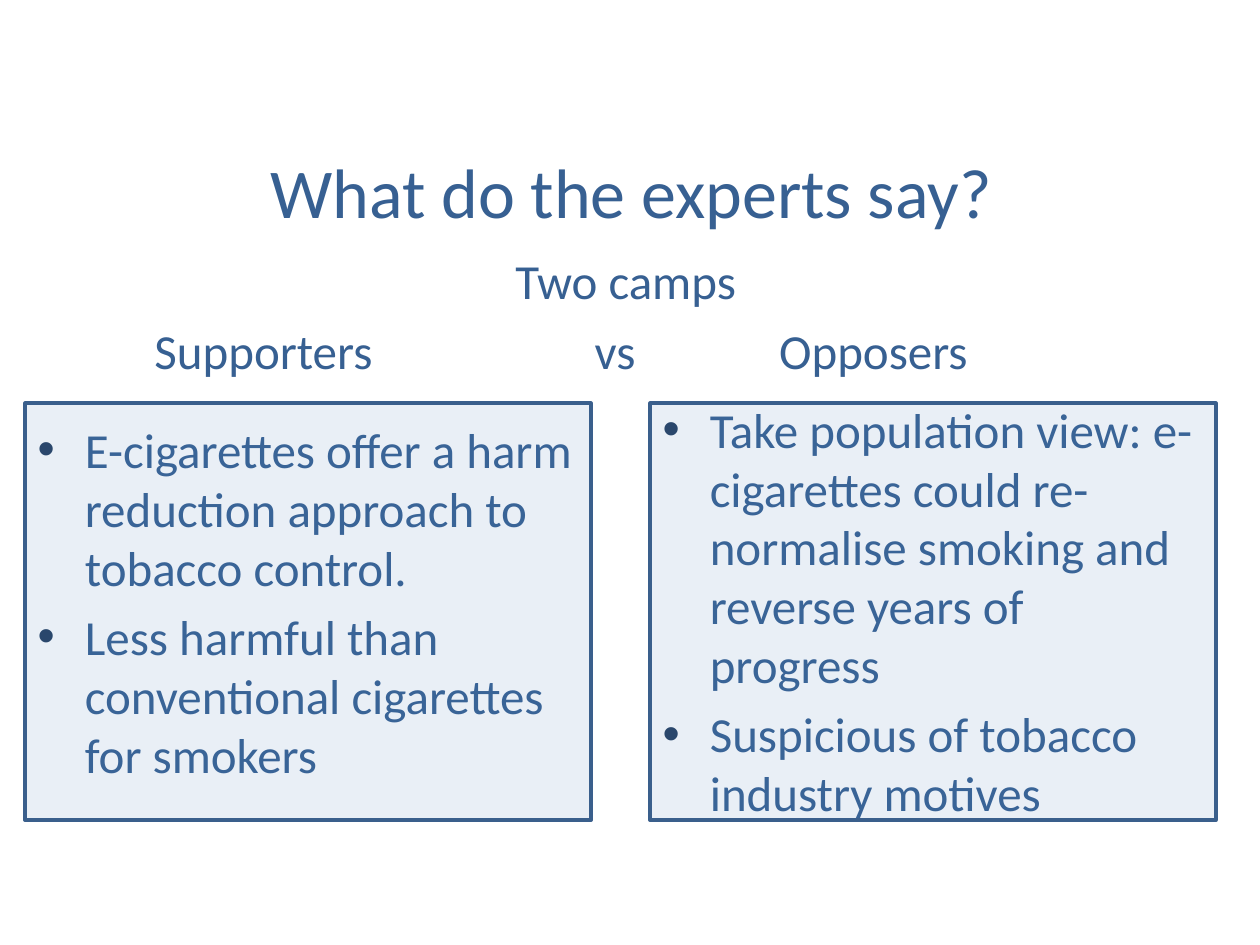
from lxml.etree import SubElement
from pptx import Presentation
from pptx.dml.color import RGBColor
from pptx.enum.shapes import MSO_SHAPE
from pptx.enum.text import MSO_ANCHOR, PP_ALIGN
from pptx.oxml.ns import qn
from pptx.util import Pt

BLUE = "376092"


def color(code):
    return RGBColor.from_string(code)


def write(left, top, width, height, lines, size=28, gap=6):
    """Add a text box with one paragraph per line and return its text frame."""
    box = slide.shapes.add_textbox(Pt(left), Pt(top), Pt(width), Pt(height))
    frame = box.text_frame
    frame.word_wrap = True
    for i, line in enumerate(lines):
        para = frame.paragraphs[0] if i == 0 else frame.add_paragraph()
        para.space_before = Pt(gap)
        run = para.add_run()
        run.text = line
        run.font.name = "Calibri"
        run.font.size = Pt(size)
        run.font.color.rgb = color(BLUE)
    return frame


deck = Presentation()
deck.slide_width, deck.slide_height = Pt(720), Pt(540)
slide = deck.slides.add_slide(deck.slide_layouts[6])

# Heading
title = write(36.7, 77.8, 648, 62, ["What do the experts say?"], 40, 0)
title.vertical_anchor = MSO_ANCHOR.MIDDLE
title.paragraphs[0].alignment = PP_ALIGN.CENTER

# Two camps, with the names of the sides set on tab stops
camps = write(36.7, 139.7, 648, 84, ["Two camps ", "\tSupporters\tvs\tOpposers"])
camps.paragraphs[0].alignment = PP_ALIGN.CENTER
tabs = SubElement(camps.paragraphs[1]._p.get_or_add_pPr(), qn("a:tabLst"))
for stop in (44.5, 296, 401.5):
    SubElement(tabs, qn("a:tab"), pos=str(int(Pt(stop))), algn="l")

# Arguments of each side
sides = [
    (14.4, 236.2, 323.3, [
        "E-cigarettes offer a harm reduction approach to tobacco control.",
        "Less harmful than conventional cigarettes for smokers",
    ]),
    (371.5, 224.6, 317.5, [
        "Take population view: e-cigarettes could re-normalise smoking "
        "and reverse years of progress",
        "Suspicious of tobacco industry motives",
    ]),
]
for left, top, width, points in sides:
    frame = write(left, top, width, 68.4, points)
    for para in frame.paragraphs:
        props = para._p.get_or_add_pPr()
        props.set("marL", str(int(Pt(27))))
        props.set("indent", str(int(Pt(-27))))
        tint = SubElement(props, qn("a:buClr"))
        SubElement(tint, qn("a:srgbClr"), val="254061")
        SubElement(props, qn("a:buFont"), typeface="Arial")
        SubElement(props, qn("a:buChar"), char="•")

# Tinted panels over the arguments
for left, *_ in sides:
    panel = slide.shapes.add_shape(
        MSO_SHAPE.RECTANGLE, Pt(left), Pt(230.4), Pt(323.3), Pt(238.3))
    panel.shadow.inherit = False
    panel.fill.solid()
    panel.fill.fore_color.rgb = color("4F81BD")
    shade = panel.fill._xPr.find(qn("a:solidFill"))[0]
    SubElement(shade, qn("a:alpha"), val="12000")
    panel.line.color.rgb = color("3A5F8C")
    panel.line.width = Pt(2)

deck.save("out.pptx")
